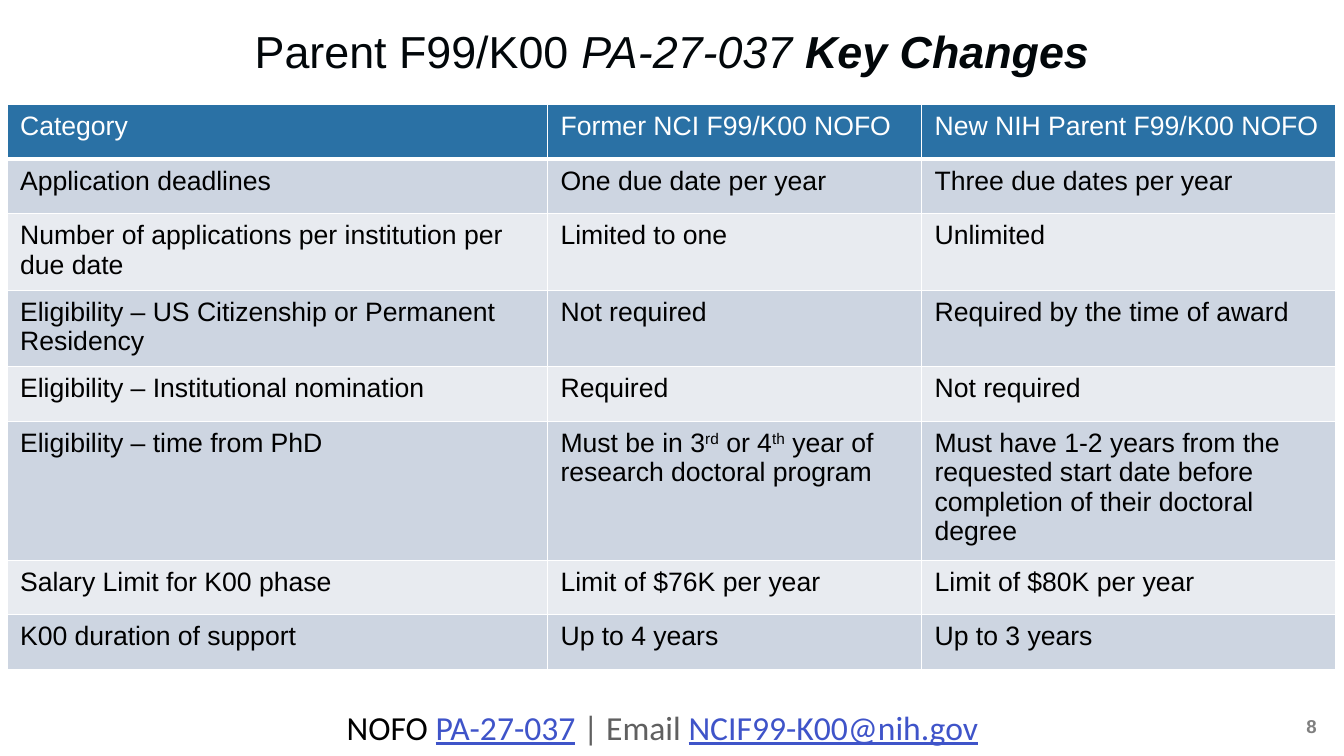
from dataclasses import dataclass

from lxml import etree
from pptx import Presentation
from pptx import util as u
from pptx.dml.color import RGBColor
from pptx.enum import text
from pptx.oxml import ns


@dataclass(frozen=True)
class Theme:
    sans: str = "Arial"
    footer_font: str = "Calibri"
    title_color: str = "02070A"
    ink: str = "000000"
    white: str = "FFFFFF"
    header: str = "2A71A5"
    bands: tuple = ("CDD5E1", "E8EBF0")
    link: str = "3F54C9"
    muted: str = "606060"
    number: str = "7F7F7F"
    title_size: float = 32
    table_size: float = 19
    footer_size: float = 24
    number_size: float = 13.3


class SlideBuilder:
    def __init__(self, presentation, theme):
        self.theme = theme
        self.slide = presentation.slides.add_slide(presentation.slide_layouts[5])

    def add_runs(self, paragraph, runs, font, size, color):
        """Each run is a string or a (string, font overrides) pair."""
        for item in runs:
            words, look = (item, {}) if isinstance(item, str) else item
            run = paragraph.add_run()
            run.text = words
            run.font.name = font
            run.font.size = u.Pt(size)
            run.font.bold = look.get("bold", False)
            run.font.italic = look.get("italic", False)
            run.font.underline = look.get("underline", False)
            run.font.color.rgb = RGBColor.from_string(look.get("color", color))
            if look.get("superscript"):
                run.font._element.set("baseline", "30000")

    def clear_margins(self, frame):
        frame.margin_left = frame.margin_right = 0
        frame.margin_top = frame.margin_bottom = 0

    def title(self, box, runs):
        shape = self.slide.shapes.title
        shape.left, shape.top, shape.width, shape.height = map(u.Inches, box)
        frame = shape.text_frame
        frame.word_wrap = True
        frame.auto_size = text.MSO_AUTO_SIZE.NONE
        frame.vertical_anchor = text.MSO_ANCHOR.BOTTOM
        self.clear_margins(frame)
        paragraph = frame.paragraphs[0]
        paragraph.alignment = text.PP_ALIGN.CENTER
        paragraph.line_spacing = 0.9
        theme = self.theme
        self.add_runs(paragraph, runs, theme.sans, theme.title_size, theme.title_color)

    def text_box(self, box, runs, font, size, color):
        frame = self.slide.shapes.add_textbox(*map(u.Inches, box)).text_frame
        frame.word_wrap = True
        self.add_runs(frame.paragraphs[0], runs, font, size, color)
        return frame

    def slide_number(self, box, number):
        theme = self.theme
        frame = self.text_box(box, [(number, {"bold": True})],
                              theme.sans, theme.number_size, theme.number)
        self.clear_margins(frame)
        frame.paragraphs[0].alignment = text.PP_ALIGN.RIGHT

    def borders(self, cell, widths):
        properties = cell._tc.get_or_add_tcPr()
        for index, (side, width) in enumerate(widths.items()):
            line = etree.Element(ns.qn(f"a:ln{side}"), w=str(u.Pt(width)))
            fill = etree.SubElement(line, ns.qn("a:solidFill"))
            etree.SubElement(fill, ns.qn("a:srgbClr"), val=self.theme.white)
            properties.insert(index, line)

    def table(self, left, top, widths, heights, rows):
        theme = self.theme
        table = self.slide.shapes.add_table(
            len(rows), len(widths), u.Inches(left), u.Inches(top),
            u.Inches(sum(widths)), u.Inches(sum(heights))).table
        for column, width in zip(table.columns, widths):
            column.width = u.Inches(width)
        for row_index, (row, height) in enumerate(zip(rows, heights)):
            table.rows[row_index].height = u.Inches(height)
            is_header = row_index == 0
            fill = theme.header if is_header else theme.bands[(row_index - 1) % 2]
            color = theme.white if is_header else theme.ink
            for column_index, content in enumerate(row):
                cell = table.cell(row_index, column_index)
                cell.margin_left = cell.margin_right = u.Inches(0.13)
                cell.margin_top = cell.margin_bottom = u.Inches(0.07)
                cell.fill.solid()
                cell.fill.fore_color.rgb = RGBColor.from_string(fill)
                self.borders(cell, {"L": 1, "R": 1, "T": 1, "B": 3 if is_header else 1})
                runs = [content] if isinstance(content, str) else content
                self.add_runs(cell.text_frame.paragraphs[0], runs,
                              theme.sans, theme.table_size, color)


SUPERSCRIPT = {"superscript": True}
KEY_CHANGES = [
    ("Category", "Former NCI F99/K00 NOFO", "New NIH Parent F99/K00 NOFO"),
    ("Application deadlines", "One due date per year", "Three due dates per year"),
    ("Number of applications per institution per due date", "Limited to one", "Unlimited"),
    ("Eligibility – US Citizenship or Permanent Residency", "Not required",
     "Required by the time of award"),
    ("Eligibility – Institutional nomination", "Required", "Not required"),
    ("Eligibility – time from PhD",
     ["Must be in 3", ("rd", SUPERSCRIPT), " or 4", ("th", SUPERSCRIPT),
      " year of research doctoral program"],
     "Must have 1-2 years from the requested start date before completion of "
     "their doctoral degree"),
    ("Salary Limit for K00 phase", "Limit of $76K per year", "Limit of $80K per year"),
    ("K00 duration of support", "Up to 4 years", "Up to 3 years"),
]


def main():
    theme = Theme()
    presentation = Presentation()
    presentation.slide_width = u.Inches(13.33)
    presentation.slide_height = u.Inches(7.5)
    builder = SlideBuilder(presentation, theme)

    # Title
    builder.title((0.49, 0.15, 12.35, 0.63), [
        "Parent F99/K00",
        (" PA-27-037 ", {"italic": True}),
        ("Key Changes", {"italic": True, "bold": True}),
    ])

    # Comparison table
    one_line, two_lines, four_lines = 0.54, 0.76, 1.38
    heights = [one_line, one_line, two_lines, two_lines,
               one_line, four_lines, one_line, one_line]
    builder.table(0.07, 1.04, [5.36, 3.71, 4.11], heights, KEY_CHANGES)

    # Contact line and slide number
    link = {"color": theme.link, "underline": True}
    builder.text_box((3.34, 6.96, 6.83, 0.5), [
        "NOFO ",
        ("PA-27-037", link),
        (" | Email ", {"color": theme.muted}),
        ("NCIF99-K00@nih.gov", link),
    ], theme.footer_font, theme.footer_size, theme.ink)
    builder.slide_number((12.61, 7.09, 0.45, 0.27), "8")

    presentation.save("out.pptx")


if __name__ == "__main__":
    main()
